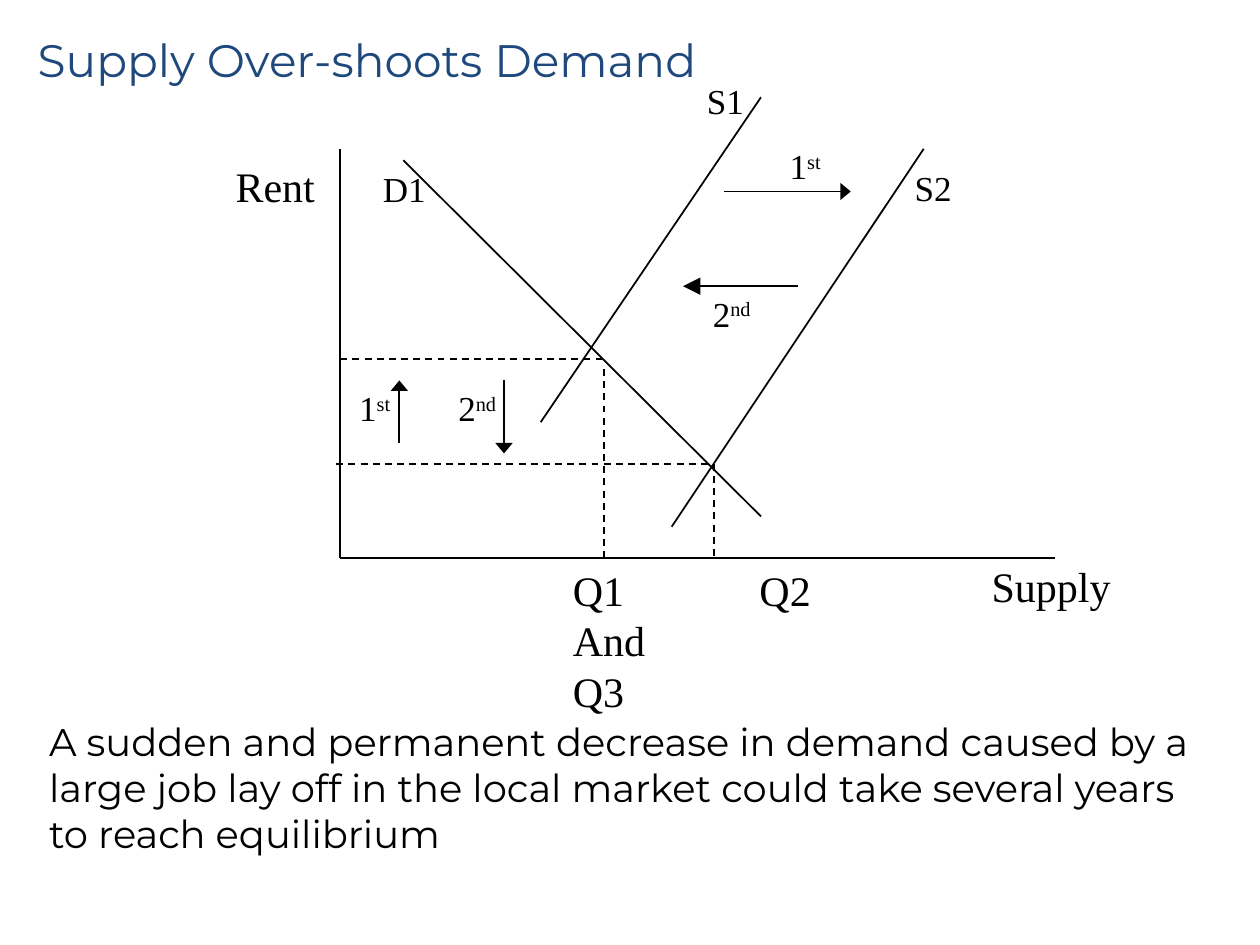
from dataclasses import dataclass

from lxml.etree import SubElement
from pptx import Presentation
from pptx.dml.color import RGBColor
from pptx.enum.dml import MSO_LINE_DASH_STYLE as DASH
from pptx.enum.shapes import MSO_CONNECTOR as CONN
from pptx.enum.text import MSO_AUTO_SIZE as AUTO
from pptx.oxml.ns import qn
from pptx.util import Cm, Pt


@dataclass(frozen=True)
class Theme:
    ink: RGBColor = RGBColor(0x00, 0x00, 0x00)
    heading: RGBColor = RGBColor(0x1F, 0x49, 0x7D)
    sans: str = "Montserrat"
    serif: str = "Times New Roman"
    title: int = 26
    body: int = 22
    axis: int = 24
    curve: int = 20
    stroke: int = 1


class MarketSlide:
    """Draws the parts of a supply and demand diagram on one slide."""

    def __init__(self, slide, theme):
        self.slide = slide
        self.theme = theme

    def line(self, start, end, dashed=False, head=None):
        x1, y1, x2, y2 = (Cm(v) for v in (*start, *end))
        sp = self.slide.shapes.add_connector(CONN.STRAIGHT, x1, y1, x2, y2)
        sp.line.color.rgb = self.theme.ink
        sp.line.width = Pt(self.theme.stroke)
        if dashed:
            sp.line.dash_style = DASH.DASH
        if head:
            SubElement(sp.line._get_or_add_ln(), qn("a:tailEnd"),
                       type="triangle", w="lg", len=head)
        SubElement(sp._element.spPr, qn("a:effectLst"))

    def text(self, box, lines, size, font, color, wrap=True):
        sp = self.slide.shapes.add_textbox(*(Cm(v) for v in box))
        tf = sp.text_frame
        tf.word_wrap = wrap
        tf.auto_size = AUTO.SHAPE_TO_FIT_TEXT
        for i, line in enumerate(lines):
            p = tf.paragraphs[0] if i == 0 else tf.add_paragraph()
            p.add_run().text = line
            p.font.name, p.font.size = font, Pt(size)
            p.font.color.rgb = color
        return tf

    def label(self, x, y, w, text, size):
        lines = text.split("\n")
        h = 0.25 + len(lines) * size * 0.042
        return self.text((x, y, w, h), lines, size, self.theme.serif,
                         self.theme.ink, wrap=False)

    def ordinal(self, x, y, number, suffix):
        tf = self.label(x, y, 1.35, number, self.theme.curve)
        r = tf.paragraphs[0].add_run()
        r.text = suffix
        r.font._element.set("baseline", "30000")


def main():
    prs = Presentation()
    prs.slide_width, prs.slide_height = Cm(25.4), Cm(19.05)
    theme = Theme()
    s = MarketSlide(prs.slides.add_slide(prs.slide_layouts[6]), theme)

    axis_x, axis_y = 6.86, 11.25
    q1, q2 = 12.17, 14.4
    rent_high, rent_low = 7.24, 9.35

    s.line((axis_x, 3), (axis_x, axis_y))
    s.line((axis_x, axis_y), (21.26, axis_y))
    for start, end in [
        ((8.13, 3.23), (15.34, 10.41)),
        ((15.34, 1.96), (10.9, 8.51)),
        ((18.62, 3), (13.54, 10.62)),
    ]:
        s.line(start, end)
    for start, end in [
        ((axis_x, rent_high), (q1, rent_high)),
        ((q1, 7.44), (q1, axis_y)),
        ((6.78, rent_low), (q2, rent_low)),
        ((q2, rent_low), (q2, axis_y)),
    ]:
        s.line(start, end, dashed=True)
    for start, end, head in [
        ((14.6, 3.86), (17.15, 3.86), "med"),
        ((16.08, 5.77), (13.77, 5.77), "lg"),
        ((8.05, 8.94), (8.05, 7.67), "med"),
        ((10.16, 7.67), (10.16, 9.14), "med"),
    ]:
        s.line(start, end, head=head)

    for x, y, text in [
        (7.47, 3.25, "D1"),
        (14, 1.47, "S1"),
        (18.19, 3.23, "S2"),
    ]:
        s.label(x, y, 1.4, text, theme.curve)
    for x, y, w, text in [
        (4.5, 3.12, 2.15, "Rent"),
        (19.74, 11.18, 2.95, "Supply"),
        (11.3, axis_y, 2.02, "Q1\nAnd\nQ3"),
        (15.06, axis_y, 1.6, "Q2"),
    ]:
        s.label(x, y, w, text, theme.axis)
    for x, y, number, suffix in [
        (15.67, 2.79, "1", "st"),
        (14.12, 5.77, "2", "nd"),
        (6.99, 7.67, "1", "st"),
        (8.99, 7.67, "2", "nd"),
    ]:
        s.ordinal(x, y, number, suffix)

    s.text((0.51, 0.53, 14.81, 1.35), ["Supply Over-shoots Demand"],
           theme.title, theme.sans, theme.heading)
    s.text((0.74, 14.35, 23.83, 3.07),
           ["A sudden and permanent decrease in demand caused by a large job "
            "lay off in the local market could take several years to reach "
            "equilibrium"],
           theme.body, theme.sans, theme.ink)
    prs.save("out.pptx")


if __name__ == "__main__":
    main()
